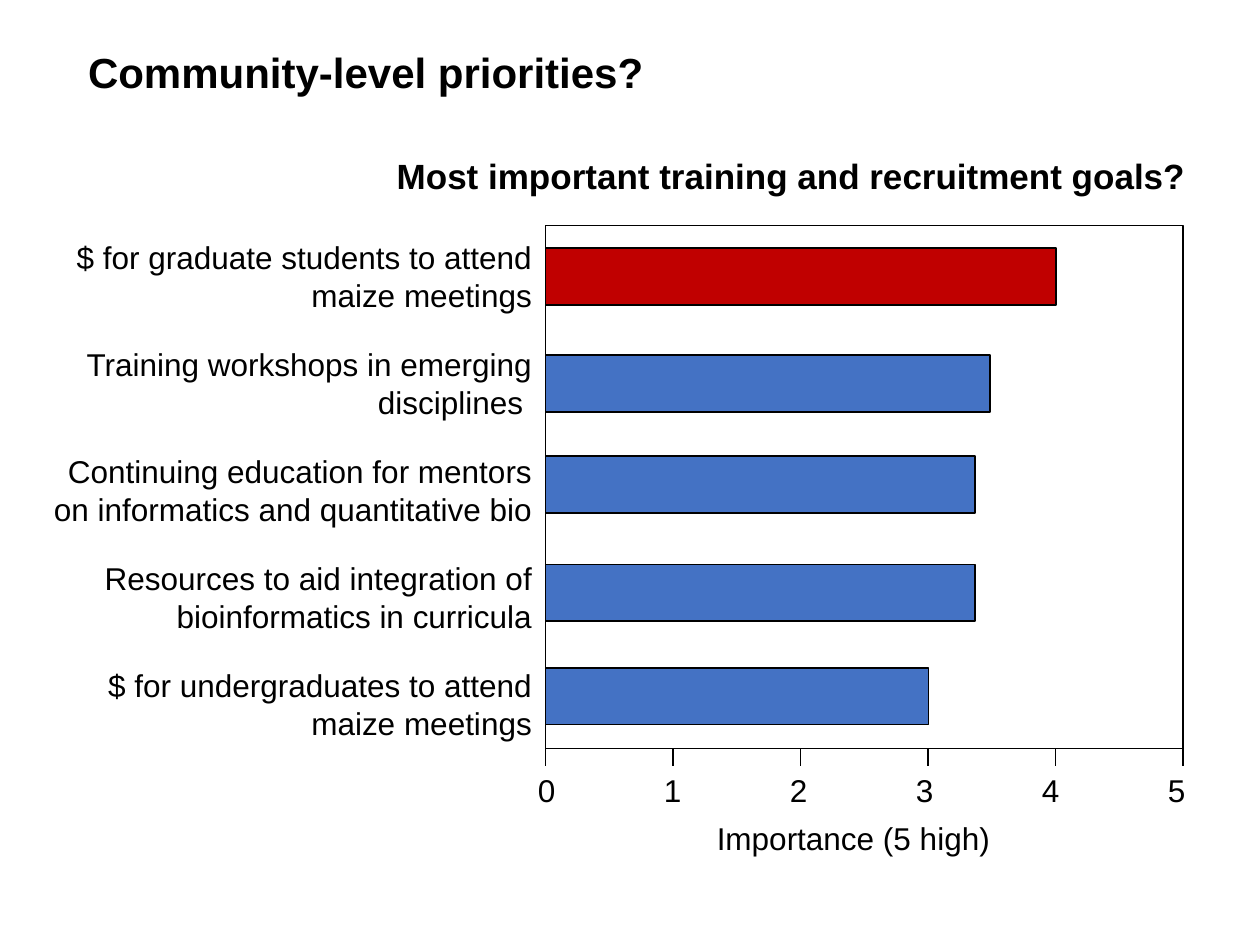
"""Build a slide that ranks training and recruitment goals as horizontal bars."""
from dataclasses import dataclass

import lxml.etree
import pptx
import pptx.dml.color
import pptx.enum.shapes
import pptx.enum.text
import pptx.oxml.ns
import pptx.util

Inches = pptx.util.Inches
Pt = pptx.util.Pt
ALIGN = pptx.enum.text.PP_ALIGN

BLACK, BLUE, RED = "000000", "4472C4", "C00000"
PLOT_LEFT, PLOT_TOP, PLOT_WIDTH, PLOT_HEIGHT = 4.33, 1.79, 5.06, 4.15
BAR_HEIGHT = 0.45
AXIS_MAXIMUM = 5
UNIT = PLOT_WIDTH / AXIS_MAXIMUM
TICK_LENGTH = 0.14


@dataclass
class Goal:
    label: str
    top: float
    width: float
    color: str = BLUE


@dataclass
class Label:
    lines: list[str]
    left: float
    top: float
    width: float
    height: float
    size: int = 18
    bold: bool = False
    wrap: bool = False
    align: ALIGN = ALIGN.LEFT
    before: int = 0
    after: int = 0


GOALS = [
    Goal("$ for graduate students to attend maize meetings", 1.97, 4.05, RED),
    Goal("Training workshops in emerging disciplines ", 2.82, 3.53),
    Goal("Continuing education for mentors on informatics and quantitative bio", 3.62, 3.41),
    Goal("Resources to aid integration of bioinformatics in curricula", 4.48, 3.41),
    Goal("$ for undergraduates to attend maize meetings", 5.3, 3.04),
]
HEADINGS = [
    Label(["Community-level priorities?"], 0.6, 0.32, 4.65, 0.5, size=24, bold=True),
    Label(["Most important training and recruitment goals?"], 3.05, 1.18, 6.51, 0.44,
          size=20, bold=True),
]
GOAL_LABELS = Label([goal.label for goal in GOALS], 0.31, 1.84, 4.01, 4.14,
                    wrap=True, align=ALIGN.RIGHT, before=6, after=12)
AXIS_TITLE = Label(["Importance (5 high)"], 5.59, 6.45, 2.39, 0.4)
AXIS_NUMBERS = Label(["\t".join(str(value) for value in range(AXIS_MAXIMUM + 1))],
                     4.17, 6.07, 5.43, 0.4, wrap=True, after=6)


def rgb(color: str) -> pptx.dml.color.RGBColor:
    return pptx.dml.color.RGBColor.from_string(color)


def add_label(slide, label: Label):
    shape = slide.shapes.add_textbox(Inches(label.left), Inches(label.top),
                                     Inches(label.width), Inches(label.height))
    text_frame = shape.text_frame
    text_frame.text = "\n".join(label.lines)
    text_frame.word_wrap = label.wrap
    text_frame.auto_size = pptx.enum.text.MSO_AUTO_SIZE.SHAPE_TO_FIT_TEXT
    for paragraph in text_frame.paragraphs:
        paragraph.alignment = label.align
        paragraph.space_before = Pt(label.before)
        paragraph.space_after = Pt(label.after)
        for run in paragraph.runs:
            run.font.name = "Arial"
            run.font.size = Pt(label.size)
            run.font.bold = label.bold
            run.font.color.rgb = rgb(BLACK)
    return shape


def add_tab_stops(paragraph, spacing: float, count: int) -> None:
    qn = pptx.oxml.ns.qn
    properties = paragraph._p.get_or_add_pPr()
    tab_list = lxml.etree.SubElement(properties, qn("a:tabLst"))
    for index in range(1, count + 1):
        lxml.etree.SubElement(tab_list, qn("a:tab"),
                              pos=str(Inches(spacing * index)), algn="l")


def add_box(slide, top: float, width: float, height: float, color: str | None = None) -> None:
    shape = slide.shapes.add_shape(pptx.enum.shapes.MSO_SHAPE.RECTANGLE, Inches(PLOT_LEFT),
                                   Inches(top), Inches(width), Inches(height))
    shape.shadow.inherit = False
    if color:
        shape.fill.solid()
        shape.fill.fore_color.rgb = rgb(color)
    else:
        shape.fill.background()
    shape.line.color.rgb = rgb(BLACK)
    shape.line.width = Pt(1)


def add_ticks(slide) -> None:
    group = slide.shapes.add_group_shape()
    top = PLOT_TOP + PLOT_HEIGHT
    for value in range(AXIS_MAXIMUM + 1):
        x = Inches(PLOT_LEFT + value * UNIT)
        tick = group.shapes.add_connector(pptx.enum.shapes.MSO_CONNECTOR.STRAIGHT,
                                          x, Inches(top), x, Inches(top + TICK_LENGTH))
        tick.line.color.rgb = rgb(BLACK)
        tick.line.width = Pt(1)
        lxml.etree.SubElement(tick._element.spPr, pptx.oxml.ns.qn("a:effectLst"))


def main() -> None:
    presentation = pptx.Presentation()
    presentation.slide_width = Inches(10)
    presentation.slide_height = Inches(7.5)
    slide = presentation.slides.add_slide(presentation.slide_layouts[6])

    for label in [*HEADINGS, GOAL_LABELS]:
        add_label(slide, label)
    add_box(slide, PLOT_TOP, PLOT_WIDTH, PLOT_HEIGHT)
    for goal in reversed(GOALS):
        add_box(slide, goal.top, goal.width, BAR_HEIGHT, goal.color)
    add_label(slide, AXIS_TITLE)
    add_ticks(slide)
    numbers = add_label(slide, AXIS_NUMBERS)
    add_tab_stops(numbers.text_frame.paragraphs[0], 1, AXIS_MAXIMUM)

    presentation.save("out.pptx")


if __name__ == "__main__":
    main()
